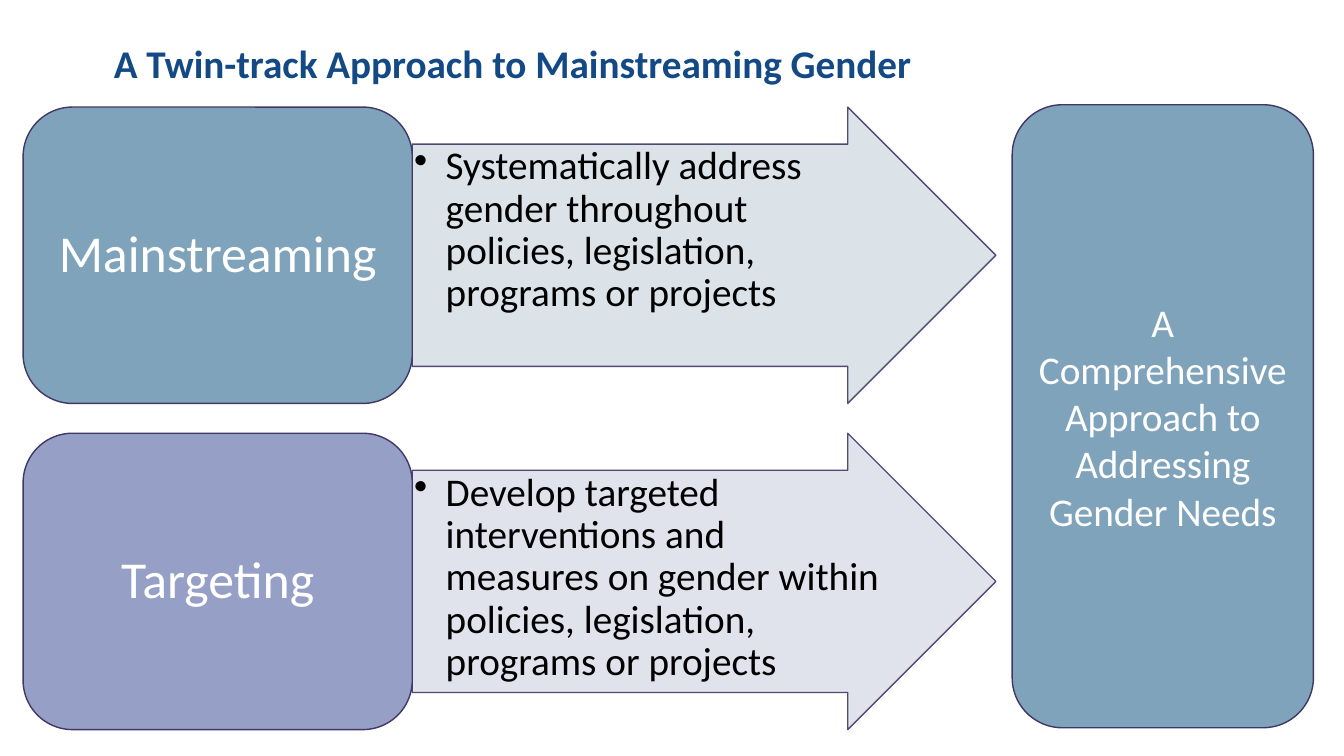
from lxml import etree
from pptx import Presentation
from pptx.dml.color import RGBColor
from pptx.enum import shapes, text
from pptx.oxml.ns import qn
from pptx.util import Pt

# Content
TITLE = "A Twin-track Approach to Mainstreaming Gender"
GOAL = "A Comprehensive Approach to Addressing Gender Needs"
BLUE = RGBColor(0x7F, 0xA3, 0xBA)
LILAC = RGBColor(0x96, 0x9F, 0xC6)
PALE_BLUE = RGBColor(0xD8, 0xE0, 0xE7)
PALE_LILAC = RGBColor(0xDD, 0xDF, 0xEA)
EDGE = RGBColor(0x41, 0x37, 0x66)
NAVY = RGBColor(0x13, 0x49, 0x85)
WHITE = RGBColor(255, 255, 255)
BLACK = RGBColor(0, 0, 0)
TRACKS = [
    ("Mainstreaming", BLUE, PALE_BLUE,
     "Systematically address gender throughout policies, legislation, "
     "programs or projects"),
    ("Targeting", LILAC, PALE_LILAC,
     "Develop targeted interventions and measures on gender within policies, "
     "legislation, programs or projects"),
]

# Layout in points
LEFT, TOP, HIGH, STEP = 16.5, 76.5, 211.7, 233
CARD_W, ARROW_W = 278, 416.9
GOAL_BOX = (723, 74.8, 215.2, 445)
TITLE_BOX = (74.2, 24.5, 591, 63.4)

deck = Presentation()
deck.slide_width, deck.slide_height = Pt(960), Pt(540)
slide = deck.slides.add_slide(deck.slide_layouts[6])


def write(shape, words, size, color, insets=(7.2, 3.6, 7.2, 3.6),
          align=text.PP_ALIGN.CENTER, anchor=text.MSO_ANCHOR.MIDDLE):
    frame = shape.text_frame
    frame.text = words
    frame.word_wrap = True
    frame.vertical_anchor = anchor
    (frame.margin_left, frame.margin_top,
     frame.margin_right, frame.margin_bottom) = map(Pt, insets)
    para = frame.paragraphs[0]
    para.alignment = align
    font = para.runs[0].font
    font.name, font.size, font.color.rgb = "Calibri", Pt(size), color
    return para


def draw(kind, box, fill):
    shape = slide.shapes.add_shape(kind, *map(Pt, box))
    shape.shadow.inherit = False
    shape.fill.solid()
    shape.fill.fore_color.rgb = fill
    shape.line.color.rgb = EDGE
    shape.line.width = Pt(1)
    return shape


def fade(shape):
    for color in shape._element.spPr.iter(qn("a:srgbClr")):
        etree.SubElement(color, qn("a:alpha"), val="90000")


def bullet(para, indent):
    props = para._p.get_or_add_pPr()
    props.set("marL", str(Pt(indent)))
    props.set("indent", str(-Pt(indent)))
    etree.SubElement(props, qn("a:buChar"), char="•")


# Two tracks: an arrow with a card at its tail
for row, (name, dark, pale, action) in enumerate(TRACKS):
    top = TOP + row * STEP
    arrow = draw(shapes.MSO_SHAPE.RIGHT_ARROW,
                 (LEFT + CARD_W, top, ARROW_W, HIGH), pale)
    arrow.adjustments[0], arrow.adjustments[1] = 0.75, 0.5
    fade(arrow)
    para = write(arrow, action, 28, BLACK, (1.4, 1.4, 1.4, 1.4),
                 text.PP_ALIGN.LEFT, text.MSO_ANCHOR.TOP)
    para.line_spacing = 0.9
    bullet(para, 22.5)

    card = draw(shapes.MSO_SHAPE.ROUNDED_RECTANGLE,
                (LEFT, top, CARD_W, HIGH), dark)
    write(card, name, 37, WHITE, (10.8, 5.8, 10.8, 5.8)).line_spacing = 0.9

# Shared goal
goal = draw(shapes.MSO_SHAPE.ROUNDED_RECTANGLE, GOAL_BOX, BLUE)
write(goal, GOAL, 28, WHITE)

# Title
title = slide.shapes.add_textbox(*map(Pt, TITLE_BOX))
para = write(title, TITLE, 28, NAVY, align=text.PP_ALIGN.LEFT,
             anchor=text.MSO_ANCHOR.TOP)
para.runs[0].font.bold = True

deck.save("out.pptx")
